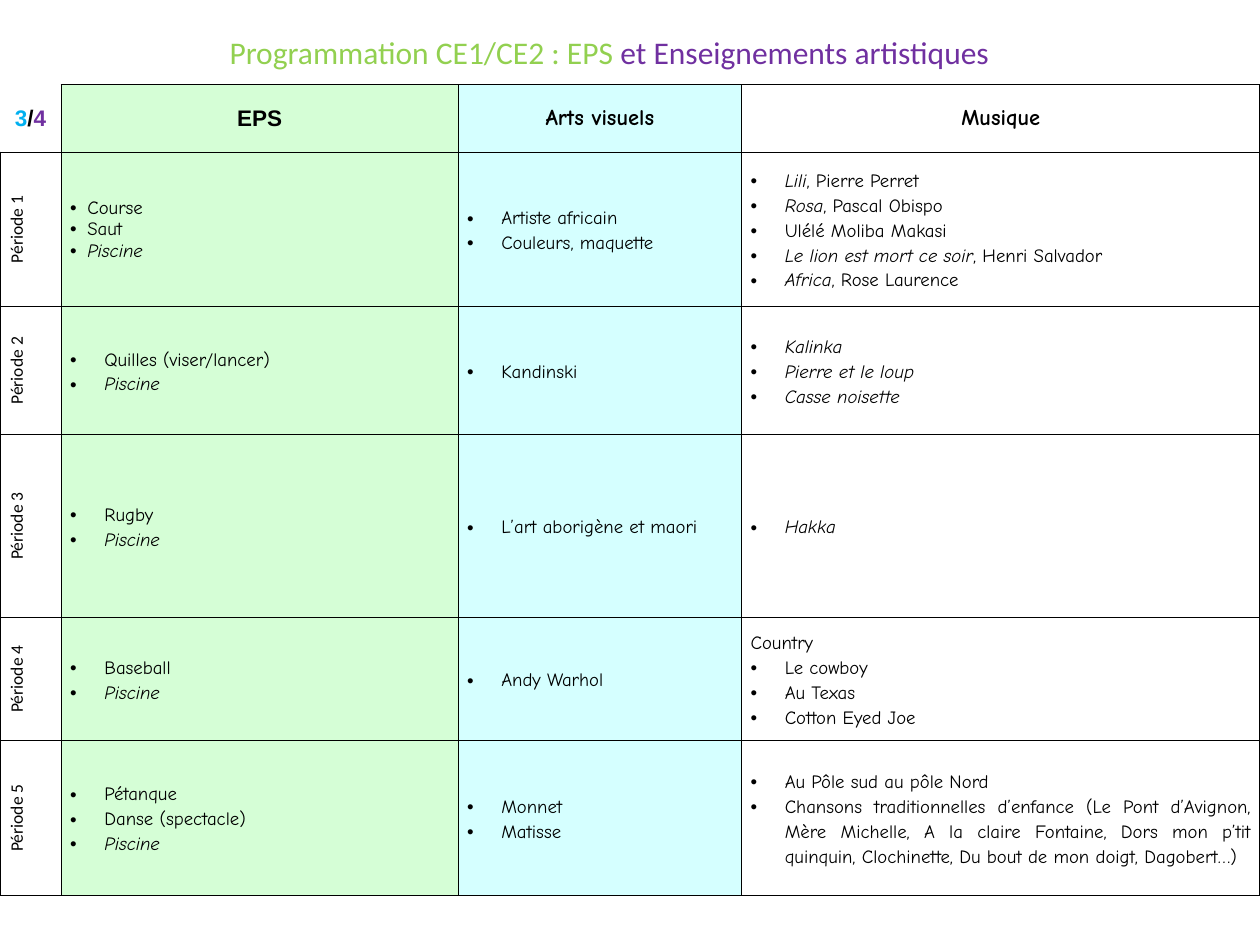
from lxml.etree import SubElement
from pptx import Presentation
from pptx.dml.color import RGBColor
from pptx.enum.text import MSO_ANCHOR, MSO_AUTO_SIZE, PP_ALIGN
from pptx.oxml.ns import qn
from pptx.util import Inches, Pt

COLORS = {
    "black": "000000",
    "lime": "92D050",
    "purple": "7030A0",
    "blue": "00B0F0",
    "pale green": "D5FED6",
    "pale cyan": "D5FFFF",
}
COLUMN_WIDTHS = [0.68, 4.41, 3.15, 5.76]
ROW_HEIGHTS = [0.75, 1.72, 1.42, 2.03, 1.37, 1.72]
COLUMN_FILLS = [None, "pale green", "pale cyan", None]
HEADINGS = [("EPS", "Arial"), ("Arts visuels", "Comic Neue"), ("Musique", "Comic Neue")]

# One row per period; *stars* enclose italics.
PERIODS = [
    (
        ["Course", "Saut", "*Piscine*"],
        ["Artiste africain", "Couleurs, maquette"],
        ["*Lili*, Pierre Perret", "*Rosa*, Pascal Obispo", "Ulélé Moliba Makasi",
         "*Le lion est mort ce soir*, Henri Salvador", "*Africa*, Rose Laurence"],
    ),
    (
        ["Quilles (viser/lancer)", "*Piscine*"],
        ["Kandinski"],
        ["*Kalinka*", "*Pierre et le loup*", "*Casse noisette*"],
    ),
    (
        ["Rugby", "*Piscine*"],
        ["L’art aborigène et maori"],
        ["*Hakka*"],
    ),
    (
        ["Baseball", "*Piscine*"],
        ["Andy Warhol"],
        ["Country", "Le cowboy", "Au Texas", "Cotton Eyed Joe"],
    ),
    (
        ["Pétanque", "Danse (spectacle)", "*Piscine*"],
        ["Monnet", "Matisse"],
        ["Au Pôle sud au pôle Nord",
         "Chansons traditionnelles d’enfance (Le Pont d’Avignon, Mère Michelle, "
         "A la claire Fontaine, Dors mon p’tit quinquin, Clochinette, "
         "Du bout de mon doigt, Dagobert…)"],
    ),
]


def rgb(name):
    return RGBColor.from_string(COLORS[name])


def set_font(para, name, size, bold=False):
    para.font.name = name
    para.font.size = Pt(size)
    para.font.bold = bold
    para.font.color.rgb = rgb("black")


def add_colored_spans(para, spans):
    for text, color in spans:
        span = para.add_run()
        span.text = text
        span.font.color.rgb = rgb(color)


def add_title(page):
    box = page.shapes.add_textbox(Inches(0.23), Inches(0.32), Inches(13.08), Inches(0.53))
    box.text_frame.word_wrap = True
    box.text_frame.auto_size = MSO_AUTO_SIZE.SHAPE_TO_FIT_TEXT
    para = box.text_frame.paragraphs[0]
    para.alignment = PP_ALIGN.CENTER
    set_font(para, "Calibri", 25.2)
    add_colored_spans(para, [("Programmation CE1/CE2 : EPS ", "lime"),
                             ("et Enseignements artistiques", "purple")])


def add_borders(cell, sides):
    properties = cell._tc.get_or_add_tcPr()
    for side in "LRTB":
        line = SubElement(properties, qn(f"a:ln{side}"), w=str(Pt(1)))
        if side in sides:
            fill = SubElement(line, qn("a:solidFill"))
            SubElement(fill, qn("a:srgbClr"), val=COLORS["black"])
        else:
            SubElement(line, qn("a:noFill"))


def style_cell(cell, fill, side_margin, end_margin, borders="LRTB"):
    cell.vertical_anchor = MSO_ANCHOR.MIDDLE
    cell.margin_left = cell.margin_right = Inches(side_margin)
    cell.margin_top = cell.margin_bottom = Inches(end_margin)
    add_borders(cell, borders)
    if fill:
        cell.fill.solid()
        cell.fill.fore_color.rgb = rgb(fill)
    else:
        cell.fill.background()


def fill_label(cell, text, font, size, bold):
    para = cell.text_frame.paragraphs[0]
    para.alignment = PP_ALIGN.CENTER
    set_font(para, font, size, bold)
    if text:
        para.add_run().text = text
    return para


def add_bullet(para, indent):
    properties = para._p.get_or_add_pPr()
    properties.set("marL", str(Inches(indent)))
    properties.set("indent", str(-Inches(indent)))
    SubElement(properties, qn("a:buFont"), typeface="Arial")
    SubElement(properties, qn("a:buChar"), char="•")


def fill_list(cell, items, compact=False):
    """Write one bullet per item; a compact list is tight and left aligned."""
    frame = cell.text_frame
    for index, item in enumerate(items):
        para = frame.add_paragraph() if index else frame.paragraphs[0]
        if not compact:
            para.alignment = PP_ALIGN.JUSTIFY
            para.line_spacing = 1.15
        if item != "Country":
            add_bullet(para, 0.19 if compact else 0.38)
        set_font(para, "Comic Neue", 15)
        for position, text in enumerate(item.split("*")):
            if text:
                span = para.add_run()
                span.text = text
                if position % 2:
                    span.font.italic = True


def add_programme(page):
    frame = page.shapes.add_table(len(ROW_HEIGHTS), len(COLUMN_WIDTHS), Inches(0), Inches(0.94),
                                  Inches(sum(COLUMN_WIDTHS)), Inches(sum(ROW_HEIGHTS)))
    table = frame.table
    table.first_row = table.horz_banding = False
    for column, width in zip(table.columns, COLUMN_WIDTHS):
        column.width = Inches(width)
    for row, height in zip(table.rows, ROW_HEIGHTS):
        row.height = Inches(height)

    corner = table.cell(0, 0)
    style_cell(corner, None, 0.14, 0.07, borders="RB")
    para = fill_label(corner, "", "Arial", 18, True)
    add_colored_spans(para, [("3", "blue"), ("/", "black"), ("4", "purple")])

    for column, (heading, font) in enumerate(HEADINGS, start=1):
        cell = table.cell(0, column)
        style_cell(cell, COLUMN_FILLS[column], 0.14, 0.07)
        fill_label(cell, heading, font, 18, True)

    for row, lists in enumerate(PERIODS, start=1):
        label = table.cell(row, 0)
        style_cell(label, None, 0.14, 0.07)
        label._tc.get_or_add_tcPr().set("vert", "vert270")
        fill_label(label, f"Période {row}", "Calibri", 14, False)
        for column, items in enumerate(lists, start=1):
            cell = table.cell(row, column)
            style_cell(cell, COLUMN_FILLS[column], 0.1, 0)
            fill_list(cell, items, compact=(row, column) == (1, 1))


def main():
    deck = Presentation()
    deck.slide_width, deck.slide_height = Inches(14), Inches(10.5)
    page = deck.slides.add_slide(deck.slide_layouts[6])
    add_title(page)
    add_programme(page)
    deck.save("out.pptx")


if __name__ == "__main__":
    main()
